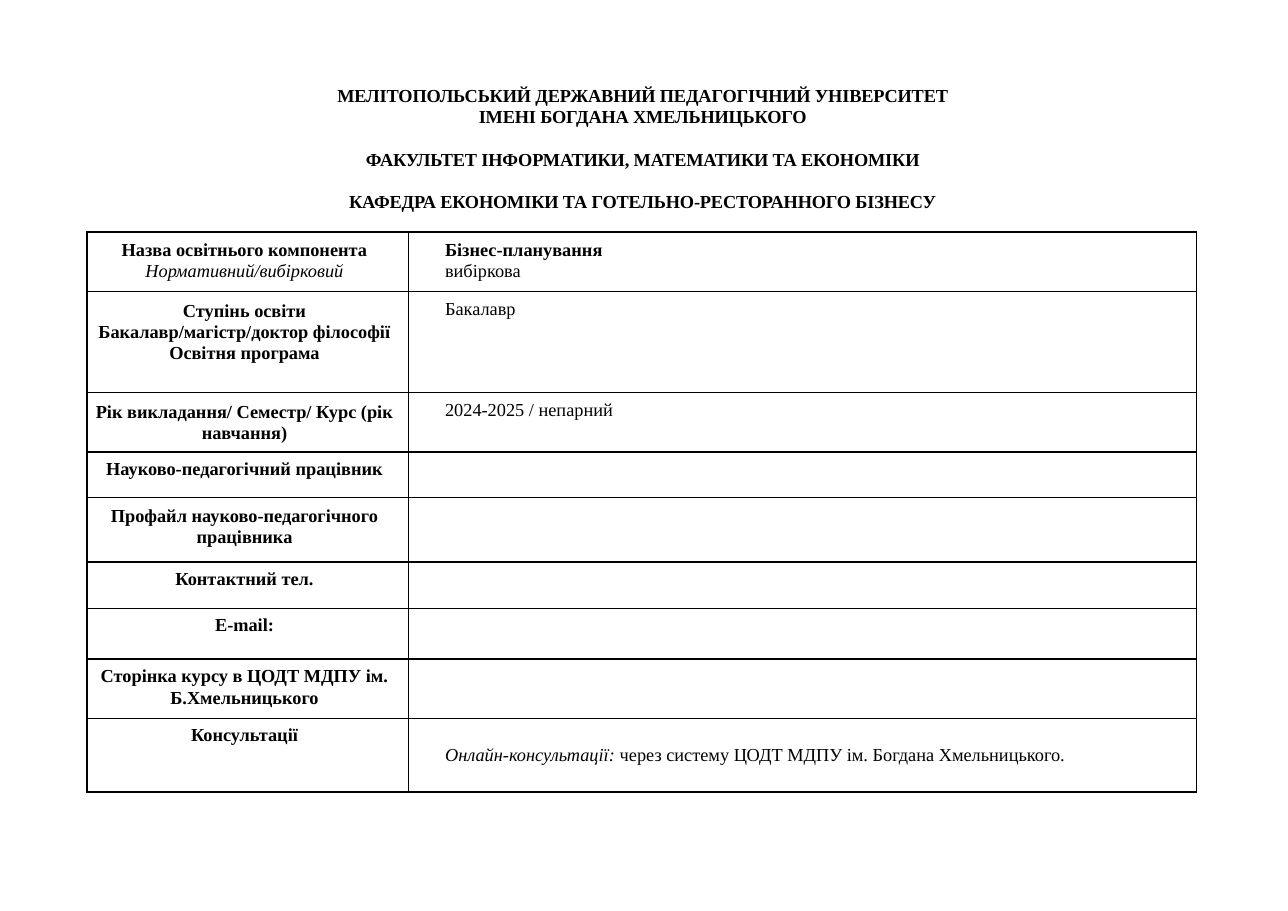
import pptx
import pptx.dml.color
import pptx.enum.text
import pptx.oxml
import pptx.oxml.ns
import pptx.util

COLORS = {"text": "000000", "border": "000000", "background": "FFFFFF"}
FONT = "Times New Roman"
ALIGN = pptx.enum.text.PP_ALIGN
BOLD = {"bold": True, "italic": False}
ITALIC = {"bold": False, "italic": True}
PLAIN = {"bold": False, "italic": False}

HEADING = [
    ("МЕЛІТОПОЛЬСЬКИЙ ДЕРЖАВНИЙ ПЕДАГОГІЧНИЙ УНІВЕРСИТЕТ", 0),
    ("ІМЕНІ БОГДАНА ХМЕЛЬНИЦЬКОГО", 0),
    ("ФАКУЛЬТЕТ ІНФОРМАТИКИ, МАТЕМАТИКИ ТА ЕКОНОМІКИ", 14.2),
    ("КАФЕДРА ЕКОНОМІКИ ТА ГОТЕЛЬНО-РЕСТОРАННОГО БІЗНЕСУ", 14.2),
]
COLUMN_SHARES = [0.29, 0.71]
ROWS = [
    (0.54, 0.06, 14.1,
     [[("Назва освітнього компонента", BOLD)], [("Нормативний/вибірковий", ITALIC)]],
     [[("Бізнес-планування", BOLD)], [("вибіркова", PLAIN)]]),
    (0.92, 0.08, 13.7,
     [[("Ступінь освіти", BOLD)], [("Бакалавр/магістр/доктор філософії", BOLD)],
      [("Освітня програма", BOLD)]],
     [[("Бакалавр", PLAIN)]]),
    (0.54, 0.08, 13.7,
     [[("Рік викладання/ Семестр/ Курс (рік", BOLD)], [("навчання)", BOLD)]],
     [[("2024-2025 / непарний", PLAIN)]]),
    (0.41, 0.06, 13.8, [[("Науково-педагогічний працівник", BOLD)]], []),
    (0.59, 0.08, 13.7,
     [[("Профайл науково-педагогічного", BOLD)], [("працівника", BOLD)]], []),
    (0.42, 0.06, 13.8, [[("Контактний тел.", BOLD)]], []),
    (0.46, 0.06, 13.8, [[("E-mail:", BOLD)]], []),
    (0.54, 0.06, 14.1,
     [[("Сторінка курсу в ЦОДТ МДПУ ім.", BOLD)], [("Б.Хмельницького", BOLD)]], []),
    (0.67, 0.06, 13.8,
     [[("Консультації", BOLD)]],
     [[("Онлайн-консультації: ", ITALIC),
       ("через систему ЦОДТ МДПУ ім. Богдана Хмельницького.", PLAIN)]]),
]


def set_attributes(target, values):
    for name, value in values.items():
        setattr(target, name, value)


def percent_box(presentation, left, top, width, height):
    sizes = [presentation.slide_width, presentation.slide_height] * 2
    return [round(size * share / 100)
            for size, share in zip(sizes, (left, top, width, height))]


def add_run(paragraph, text, style):
    run = paragraph.add_run()
    run.text = text
    set_attributes(run.font, {"name": FONT, "size": pptx.util.Pt(12), **style})
    run.font.color.rgb = pptx.dml.color.RGBColor.from_string(COLORS["text"])
    return run


def write_lines(frame, lines, alignment, line_height):
    for index, runs in enumerate(lines):
        paragraph = frame.paragraphs[0] if index == 0 else frame.add_paragraph()
        set_attributes(paragraph, {
            "alignment": alignment,
            "line_spacing": pptx.util.Pt(line_height),
            "space_before": pptx.util.Pt(0),
        })
        for text, style in runs:
            add_run(paragraph, text, style)


def build_heading(slide, box):
    title = slide.shapes.title
    set_attributes(title, dict(zip(("left", "top", "width", "height"), box)))
    frame = title.text_frame
    set_attributes(frame, {
        "margin_left": 0, "margin_right": 0, "margin_bottom": 0,
        "margin_top": pptx.util.Inches(0.03),
        "word_wrap": False,
        "auto_size": pptx.enum.text.MSO_AUTO_SIZE.NONE,
        "vertical_anchor": pptx.enum.text.MSO_ANCHOR.TOP,
    })
    write_lines(frame, [[(text, BOLD)] for text, gap in HEADING], ALIGN.CENTER, 13.8)
    for paragraph, (text, gap) in zip(frame.paragraphs, HEADING):
        paragraph.space_before = pptx.util.Pt(gap)
        for run in paragraph.runs:
            run.font._element.set("spc", "-10")


def add_borders(cell):
    properties = cell._tc.get_or_add_tcPr()
    for side in ("lnL", "lnR", "lnT", "lnB"):
        properties.append(pptx.oxml.parse_xml(
            f'<a:{side} {pptx.oxml.ns.nsdecls("a")} w="12700"><a:solidFill>'
            f'<a:srgbClr val="{COLORS["border"]}"/></a:solidFill></a:{side}>'))


def build_cell(cell, lines, alignment, line_height, margins):
    names = ("margin_left", "margin_top", "margin_right", "margin_bottom")
    set_attributes(cell, {name: pptx.util.Inches(margin)
                          for name, margin in zip(names, margins)})
    add_borders(cell)
    cell.fill.solid()
    cell.fill.fore_color.rgb = pptx.dml.color.RGBColor.from_string(COLORS["background"])
    write_lines(cell.text_frame, lines, alignment, line_height)


def build_course_table(slide, box):
    table = slide.shapes.add_table(len(ROWS), len(COLUMN_SHARES), *box).table
    set_attributes(table, {"first_row": False, "horz_banding": False})
    for column, share in zip(table.columns, COLUMN_SHARES):
        column.width = round(box[2] * share)
    total = sum(row[0] for row in ROWS)
    for index, (weight, top, line_height, label, value) in enumerate(ROWS):
        table.rows[index].height = round(box[3] * weight / total)
        value_top = 0.24 if index == len(ROWS) - 1 else 0.06
        build_cell(table.cell(index, 0), label, ALIGN.CENTER, line_height,
                   (0, top, 0.06, 0))
        build_cell(table.cell(index, 1), value, ALIGN.LEFT, line_height,
                   (0.33, value_top, 0, 0))


def main():
    presentation = pptx.Presentation()
    presentation.slide_width = pptx.util.Inches(11.71)
    presentation.slide_height = pptx.util.Inches(8.28)
    slide = presentation.slides.add_slide(presentation.slide_layouts[5])
    build_heading(slide, percent_box(presentation, 25.62, 8.94, 48.59, 14.37))
    build_course_table(slide, percent_box(presentation, 6.75, 25.48, 86.17, 61.47))
    presentation.save("out.pptx")


if __name__ == "__main__":
    main()
